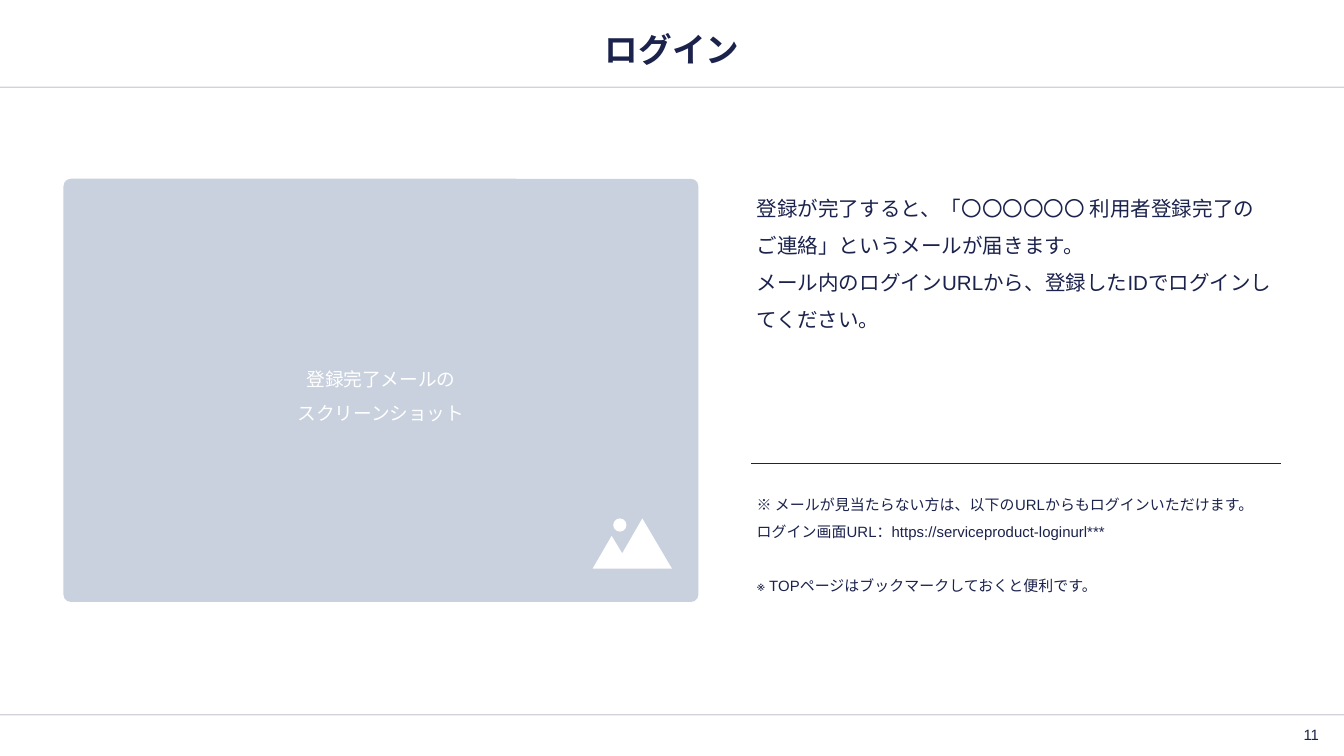
from lxml.etree import SubElement
from pptx import Presentation
from pptx.dml.color import RGBColor
from pptx.enum.shapes import MSO_CONNECTOR, MSO_SHAPE
from pptx.enum.text import MSO_ANCHOR as Anchor, MSO_AUTO_SIZE, PP_ALIGN as Align
from pptx.oxml.ns import qn
from pptx.util import Cm, Pt

NAVY = RGBColor(0x1B, 0x22, 0x4C)
PANEL = RGBColor(0xC9, 0xD1, 0xDE)
WHITE = RGBColor(0xFF, 0xFF, 0xFF)

SLIDE_WIDTH, SLIDE_HEIGHT = 25.4, 14.29
MARGIN, CONTENT_WIDTH = 1.2, 23
CONTENT_TOP = 3.38
COLUMN_LEFT, COLUMN_WIDTH = 14.2, 10


def write(shape, lines, size, color=NAVY, align=Align.LEFT, anchor=Anchor.TOP,
          spacing=1.0, bold=False):
    """Fill a shape with one paragraph per (text, space before in points)."""
    frame = shape.text_frame
    frame.word_wrap = True
    frame.auto_size = MSO_AUTO_SIZE.NONE
    frame.vertical_anchor = anchor
    frame.margin_left = frame.margin_right = Cm(0.1)
    frame.margin_top = frame.margin_bottom = Cm(0.1)
    for index, (text, before) in enumerate(lines):
        para = frame.add_paragraph() if index else frame.paragraphs[0]
        para.alignment = align
        para.line_spacing = spacing
        if before:
            para.space_before = Pt(before)
        span = para.add_run()
        span.text = text
        span.font.name = "Arial"
        span.font.size = Pt(size)
        span.font.bold = bold
        span.font.color.rgb = color


def add_text(slide, left, top, width, height, lines, size, **style):
    box = slide.shapes.add_textbox(Cm(left), Cm(top), Cm(width), Cm(height))
    write(box, lines, size, **style)


def add_title(slide, text):
    title = slide.shapes.title
    title.left, title.top = Cm(MARGIN), Cm(0.43)
    title.width, title.height = Cm(CONTENT_WIDTH), Cm(1)
    write(title, [(text, 0)], 18, align=Align.CENTER, anchor=Anchor.MIDDLE, bold=True)


def add_rule(slide, left, top, width, weight, opacity=100):
    """Draw a horizontal line; opacity is in percent."""
    rule = slide.shapes.add_connector(
        MSO_CONNECTOR.STRAIGHT, Cm(left), Cm(top), Cm(left + width), Cm(top))
    rule.line.width = Pt(weight)
    rule.line.color.rgb = NAVY
    properties = rule._element.spPr
    if opacity < 100:
        color = properties.find(".//" + qn("a:srgbClr"))
        SubElement(color, qn("a:alpha")).set("val", str(opacity * 1000))
    SubElement(properties, qn("a:effectLst"))


def paint(shape, color):
    shape.shadow.inherit = False
    shape.fill.solid()
    shape.fill.fore_color.rgb = color
    shape.line.fill.background()


def add_screenshot_panel(slide, lines):
    panel = slide.shapes.add_shape(
        MSO_SHAPE.ROUNDED_RECTANGLE, Cm(MARGIN), Cm(CONTENT_TOP), Cm(12), Cm(8))
    panel.adjustments[0] = 0.018
    paint(panel, PANEL)
    write(panel, lines, 10, color=WHITE, align=Align.CENTER,
          anchor=Anchor.MIDDLE, spacing=1.5)


def add_landscape_icon(slide):
    peaks = [(12.14, 9.8), (12.7, 10.75), (11.2, 10.75), (11.56, 10.13), (11.76, 10.46)]
    points = [(Cm(x), Cm(y)) for x, y in peaks]
    builder = slide.shapes.build_freeform(*points[0])
    builder.add_line_segments(points[1:], close=True)
    paint(builder.convert_to_shape(), WHITE)
    sun = slide.shapes.add_shape(MSO_SHAPE.OVAL, Cm(11.59), Cm(9.8), Cm(0.25), Cm(0.25))
    paint(sun, WHITE)


def main():
    deck = Presentation()
    deck.slide_width, deck.slide_height = Cm(SLIDE_WIDTH), Cm(SLIDE_HEIGHT)
    page = deck.slides.add_slide(deck.slide_layouts[5])

    for top in (1.65, 13.51):
        add_rule(page, 0, top, SLIDE_WIDTH, 0.75, opacity=20)
    add_text(page, 24.03, 13.64, 1, 0.5, [("11", 0)], 8,
             align=Align.RIGHT, anchor=Anchor.MIDDLE)
    add_title(page, "ログイン")

    add_screenshot_panel(page, [("登録完了メールの", 0), ("スクリーンショット", 0)])
    add_landscape_icon(page)

    add_text(page, COLUMN_LEFT, CONTENT_TOP, COLUMN_WIDTH, 5, [
        ("登録が完了すると、「〇〇〇〇〇〇 利用者登録完了のご連絡」というメールが届きます。", 0),
        ("メール内のログインURLから、登録したIDでログインしてください。", 0),
    ], 11, spacing=1.5)
    add_rule(page, COLUMN_LEFT, 8.76, COLUMN_WIDTH, 1)
    add_text(page, COLUMN_LEFT, 9.1, COLUMN_WIDTH, 2.8, [
        ("※ メールが見当たらない方は、以下のURLからもログインいただけます。", 0),
        ("ログイン画面URL：https://serviceproduct-loginurl***", 0),
        ("※ TOPページはブックマークしておくと便利です。", 14.5),
    ], 8, spacing=1.5)

    deck.save("out.pptx")


if __name__ == "__main__":
    main()
